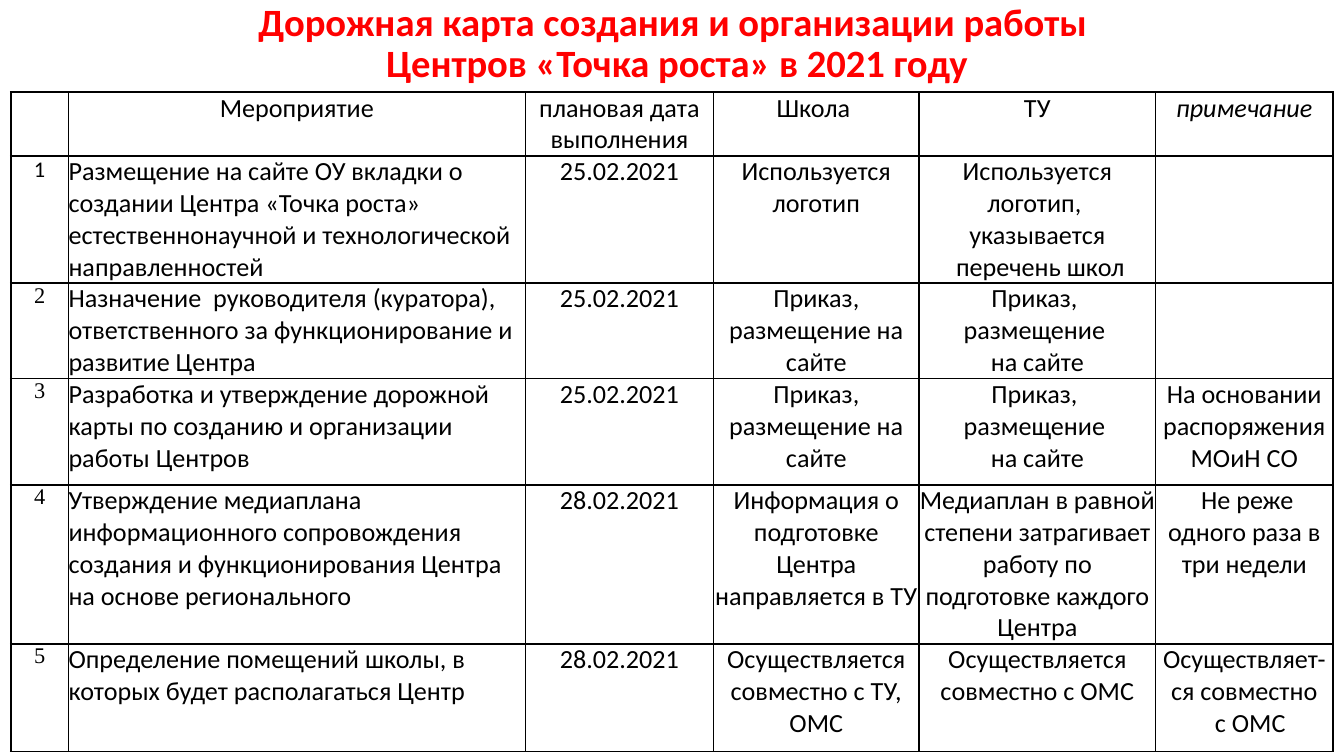
from dataclasses import dataclass
from lxml.etree import SubElement
from pptx import Presentation
from pptx.dml.color import RGBColor
from pptx.enum.text import MSO_ANCHOR, MSO_AUTO_SIZE, PP_ALIGN
from pptx.oxml.ns import qn
from pptx.util import Inches, Pt


@dataclass(frozen=True)
class Theme:
    font: str = "Calibri"
    number_font: str = "Times New Roman"
    title_color: str = "FF0000"
    ink: str = "000000"
    title_size: float = 20.7
    body_size: float = 14
    number_size: float = 12
    border: float = 1


THEME = Theme()
WIDTH = Inches(10)
HEIGHT = WIDTH * 9 // 16
TITLE_BOX = (0.028, 0.01, 0.945, 0.098)
TABLE_BOX = (0.008, 0.122, 0.984, 0.84)
COLUMNS = (0.43, 3.4, 1.4, 1.53, 1.76, 1.32)
ROWS = (0.45, 0.89, 0.67, 0.79, 1.12, 0.8)

TITLE = ("Дорожная карта создания и организации работы",
         " Центров «Точка роста» в 2021 году")
HEADER = ("", "Мероприятие", "плановая дата выполнения", "Школа ", "ТУ", "примечание")
ORDER_SCHOOL = "Приказ, размещение на сайте"
ORDER_OFFICE = "Приказ, \nразмещение \nна сайте"
STEPS = (
    ("Размещение на сайте ОУ вкладки о создании Центра «Точка роста» "
     "естественнонаучной и технологической направленностей",
     "25.02.2021", "Используется логотип",
     "Используется логотип, \nуказывается\n перечень школ", ""),
    ("Назначение  руководителя (куратора), ответственного за функционирование "
     "и развитие Центра",
     "25.02.2021", ORDER_SCHOOL, ORDER_OFFICE, ""),
    ("Разработка и утверждение дорожной карты по созданию и организации работы Центров",
     "25.02.2021", ORDER_SCHOOL, ORDER_OFFICE, "На основании распоряжения МОиН СО"),
    ("Утверждение медиаплана информационного сопровождения создания и "
     "функционирования Центра на основе регионального",
     "28.02.2021", "Информация о подготовке Центра направляется в ТУ",
     "Медиаплан в равной степени затрагивает работу по подготовке каждого Центра",
     " Не реже одного раза в три недели"),
    ("Определение помещений школы, в которых будет располагаться Центр",
     "28.02.2021", "Осуществляется совместно с ТУ, ОМС",
     "Осуществляется совместно с ОМС", "Осуществляет-ся совместно\n  с ОМС"),
)


def place(box):
    x, y, w, h = box
    return int(x * WIDTH), int(y * HEIGHT), int(w * WIDTH), int(h * HEIGHT)


def add_run(p, text, size, color, font=THEME.font, bold=False, italic=False):
    r = p.add_run()
    r.text = text
    r.font.name = font
    r.font.size = Pt(size)
    r.font.bold = bold
    r.font.italic = italic
    r.font.color.rgb = RGBColor.from_string(color)


def add_title(s, box):
    sp = s.shapes.title
    sp.left, sp.top, sp.width, sp.height = place(box)
    tf = sp.text_frame
    tf.word_wrap = True
    tf.auto_size = MSO_AUTO_SIZE.NONE
    tf.vertical_anchor = MSO_ANCHOR.MIDDLE
    p = tf.paragraphs[0]
    p.alignment = PP_ALIGN.CENTER
    p.line_spacing = 0.9
    for i, line in enumerate(TITLE):
        if i:
            p.add_line_break()
        add_run(p, line, THEME.title_size, THEME.title_color, bold=True)


def draw_borders(cell):
    props = cell._tc.get_or_add_tcPr()
    for side in ("lnL", "lnR", "lnT", "lnB"):
        ln = SubElement(props, qn(f"a:{side}"), w=str(Pt(THEME.border)))
        fill = SubElement(ln, qn("a:solidFill"))
        SubElement(fill, qn("a:srgbClr"), val=THEME.ink)


def fill_cell(cell, text, row, col):
    draw_borders(cell)
    cell.fill.background()
    cell.margin_left = cell.margin_right = cell.margin_top = cell.margin_bottom = 0
    is_number = col == 0
    size = THEME.number_size if is_number else THEME.body_size
    font = THEME.number_font if is_number and row > 1 else THEME.font
    is_step = col == 1 and row > 0
    tf = cell.text_frame
    for i, line in enumerate(text.split("\n")):
        p = tf.add_paragraph() if i else tf.paragraphs[0]
        p.alignment = PP_ALIGN.LEFT if is_step else PP_ALIGN.CENTER
        p.font.size = Pt(size)
        if line:
            add_run(p, line, size, THEME.ink, font, italic=row == 0 and col == 5)


def add_roadmap(s, box):
    x, y, w, h = place(box)
    table = s.shapes.add_table(len(ROWS), len(COLUMNS), x, y, w, h).table
    table.first_row = table.horz_banding = False
    for column, share in zip(table.columns, COLUMNS):
        column.width = int(w * share / sum(COLUMNS))
    for row, share in zip(table.rows, ROWS):
        row.height = int(h * share / sum(ROWS))
    content = [HEADER] + [(str(n), *step) for n, step in enumerate(STEPS, 1)]
    for i, texts in enumerate(content):
        for j, text in enumerate(texts):
            fill_cell(table.cell(i, j), text, i, j)


def main():
    prs = Presentation()
    prs.slide_width, prs.slide_height = WIDTH, HEIGHT
    s = prs.slides.add_slide(prs.slide_layouts[5])
    add_title(s, TITLE_BOX)
    add_roadmap(s, TABLE_BOX)
    prs.save("out.pptx")


if __name__ == "__main__":
    main()
